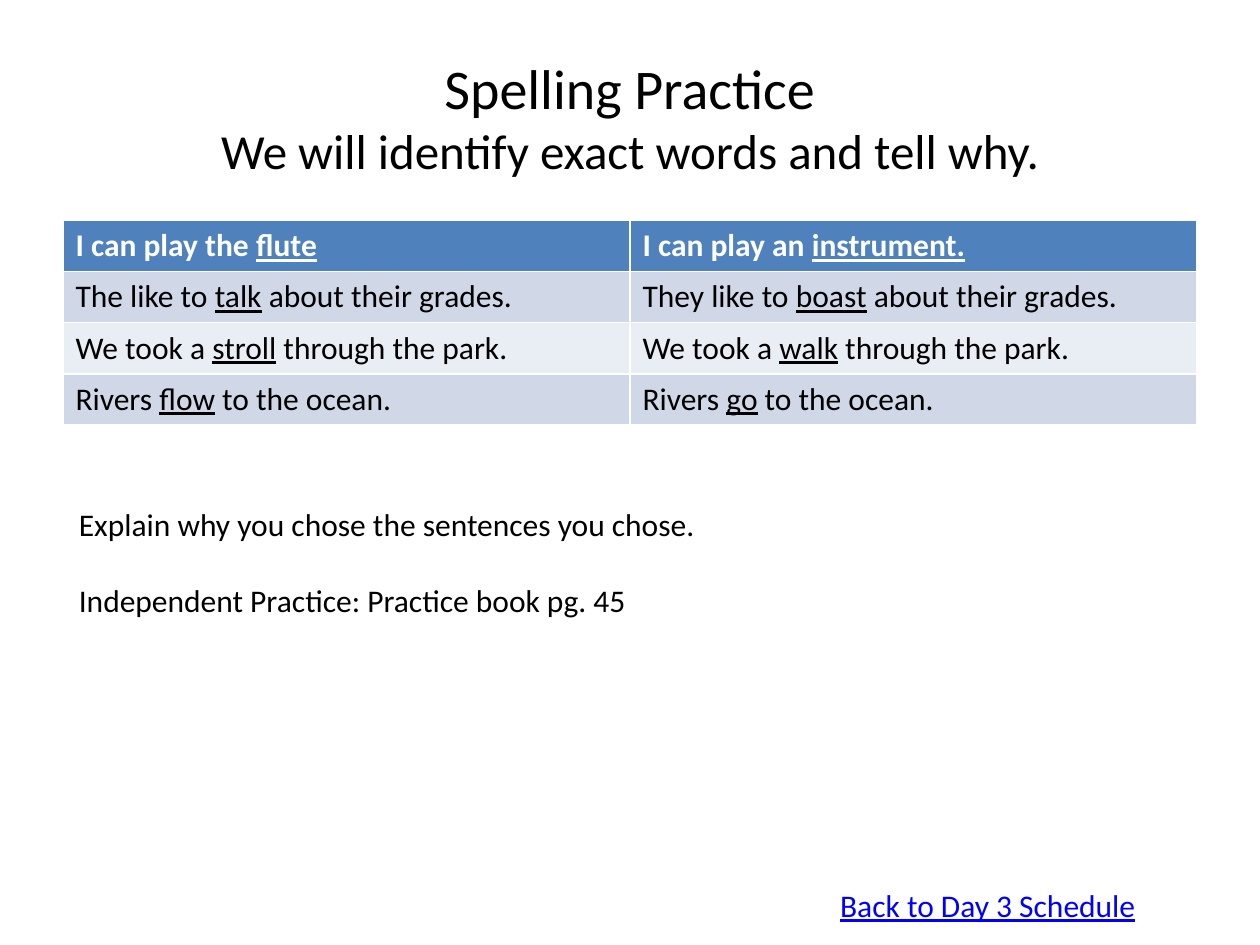
from dataclasses import dataclass

from pptx import Presentation
from pptx.dml.color import RGBColor
from pptx.enum.text import MSO_ANCHOR, MSO_AUTO_SIZE, PP_ALIGN
from pptx.util import Pt


@dataclass(frozen=True)
class Theme:
    font: str = "Calibri"
    title: int = 32
    goal: int = 28
    body: int = 18
    ink: str = "000000"
    light: str = "FFFFFF"
    link: str = "0000FF"
    head: str = "4F81BD"
    bands: tuple = ("D0D8E8", "E9EDF4")


THEME = Theme()

# Underscores enclose the underlined words.
ROWS = [
    ("I can play the _flute_", "I can play an _instrument._"),
    ("The like to _talk_ about their grades.",
     "They like to _boast_ about their grades."),
    ("We took a _stroll_ through the park.",
     "We took a _walk_ through the park."),
    ("Rivers _flow_ to the ocean.", "Rivers _go_ to the ocean."),
]
TASKS = [
    "Explain why you chose the sentences you chose.",
    "Independent Practice: Practice book pg. 45",
]


def write(para, text, size=THEME.body, color=THEME.ink, bold=False):
    """Add text to a paragraph, underlining each part between underscores."""
    for i, part in enumerate(text.split("_")):
        if not part:
            continue
        run = para.add_run()
        run.text = part
        font = run.font
        font.name = THEME.font
        font.size = Pt(size)
        font.bold = bold
        font.underline = i % 2 == 1
        font.color.rgb = RGBColor.from_string(color)


def add_title(slide):
    title = slide.shapes.title
    title.left, title.top = Pt(36), Pt(21.6)
    title.width, title.height = Pt(648), Pt(90)
    frame = title.text_frame
    frame.auto_size = MSO_AUTO_SIZE.NONE
    frame.vertical_anchor = MSO_ANCHOR.MIDDLE
    para = frame.paragraphs[0]
    para.alignment = PP_ALIGN.CENTER
    write(para, "Spelling Practice", size=THEME.title)
    para.add_line_break()
    write(para, "We will identify exact words and tell why.", size=THEME.goal)


def add_grid(slide, rows):
    high = 29.2
    grid = slide.shapes.add_table(
        len(rows), len(rows[0]), Pt(36), Pt(126), Pt(648), Pt(high * len(rows))
    ).table
    for r, row in enumerate(rows):
        head = r == 0
        fill = THEME.head if head else THEME.bands[(r - 1) % 2]
        color = THEME.light if head else THEME.ink
        for c, text in enumerate(row):
            cell = grid.cell(r, c)
            cell.fill.solid()
            cell.fill.fore_color.rgb = RGBColor.from_string(fill)
            write(cell.text_frame.paragraphs[0], text, color=color, bold=head)


def add_note(slide, lines, left, top, width, height, gap=0, **style):
    """Add a text box with one paragraph per line, set apart by gap."""
    box = slide.shapes.add_textbox(Pt(left), Pt(top), Pt(width), Pt(height))
    frame = box.text_frame
    frame.word_wrap = True
    for i, line in enumerate(lines):
        para = frame.add_paragraph() if i else frame.paragraphs[0]
        para.space_before = Pt(gap if i else 0)
        write(para, line, **style)


def main():
    deck = Presentation()
    deck.slide_width, deck.slide_height = Pt(720), Pt(540)
    slide = deck.slides.add_slide(deck.slide_layouts[5])
    add_title(slide)
    add_grid(slide, ROWS)
    add_note(slide, TASKS, 38, 285, 410, 72.7, gap=21.6)
    add_note(slide, ["_Back to Day 3 Schedule_"], 473, 502.5, 209, 29,
             color=THEME.link)
    deck.save("out.pptx")


if __name__ == "__main__":
    main()
